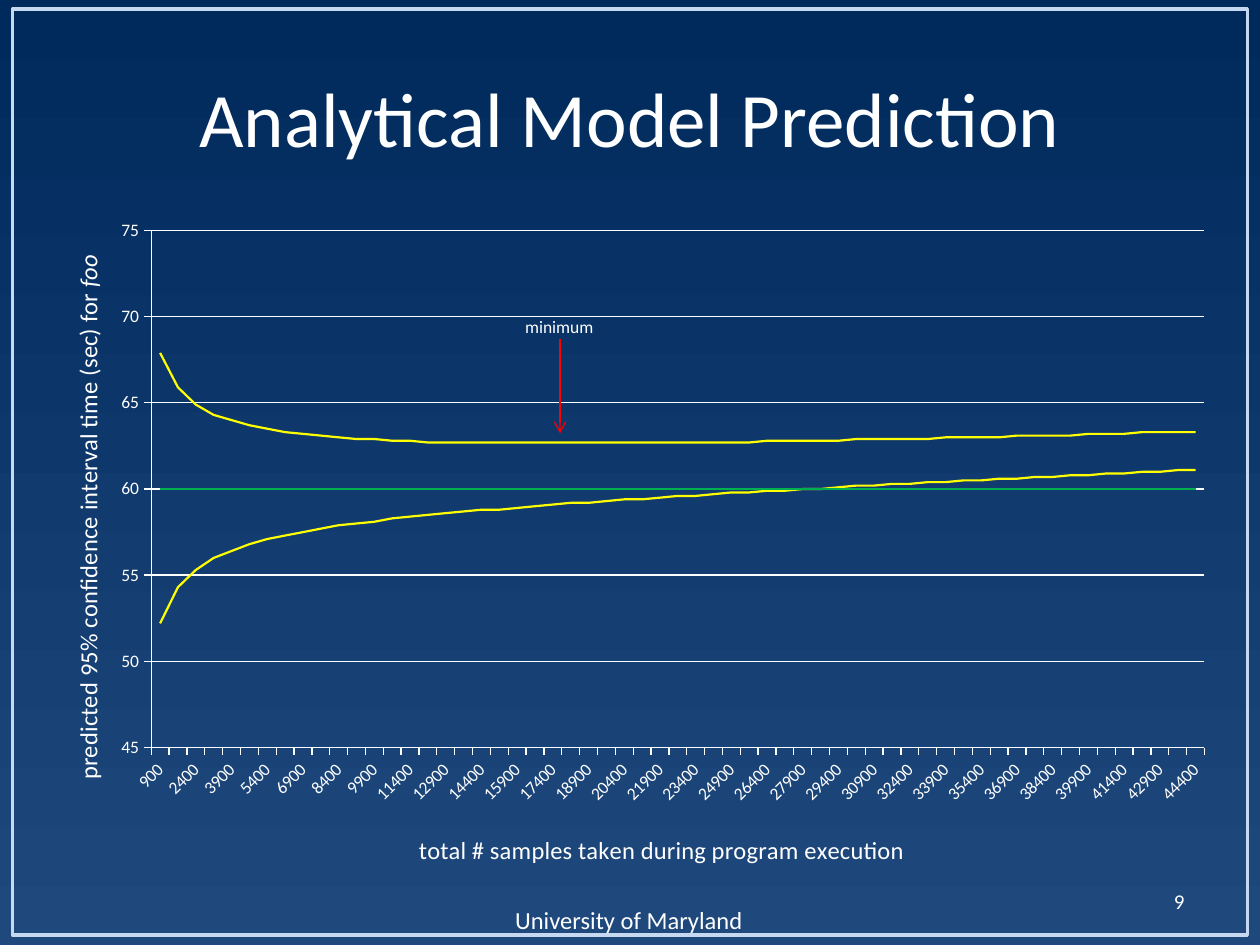
import math
import pptx
import pptx.chart.data
import pptx.dml.color
import pptx.enum.chart
import pptx.enum.shapes
import pptx.enum.text
import pptx.oxml
import pptx.oxml.ns
import pptx.util

WIDTH, HEIGHT = 10, 7.5
FONT = "Calibri"
COLORS = {
    "white": "FFFFFF",
    "frame": "C6D9F1",
    "bottom": "1F497D",
    "top": "00295C",
    "interval": "FFFF00",
    "actual": "00B050",
    "arrow": "FF0000",
}
ALIGN = pptx.enum.text.PP_ALIGN
TICK = pptx.enum.chart.XL_TICK_MARK
qn = pptx.oxml.ns.qn


def color(name):
    return pptx.dml.color.RGBColor.from_string(COLORS[name])


def inches(box):
    return [pptx.util.Inches(length) for length in box]


def set_attributes(target, values):
    for name, value in values.items():
        setattr(target, name, value)


def style_font(font, size, **values):
    set_attributes(font, {"size": pptx.util.Pt(size), "name": FONT, "bold": False, **values})
    font.color.rgb = color("white")


def style_line(line, name, width):
    line.color.rgb = color(name)
    line.width = pptx.util.Pt(width)


def add_element(parent, tag, **values):
    element = parent.makeelement(qn(tag), values)
    parent.append(element)
    return element


def set_layout(parent, **shares):
    layout = parent.find(qn("c:layout"))
    if layout is None:
        layout = parent.makeelement(qn("c:layout"), {})
        parent.insert(0, layout)
    manual = add_element(layout, "c:manualLayout")
    if "w" in shares:
        add_element(manual, "c:layoutTarget", val="inner")
    for mode in ("c:xMode", "c:yMode"):
        add_element(manual, mode, val="edge")
    for name, share in shares.items():
        add_element(manual, "c:" + name, val=str(share))


def add_text(slide, box, text, size, align=ALIGN.LEFT, wrap=True, middle=False):
    frame = slide.shapes.add_textbox(*inches(box)).text_frame
    anchor = pptx.enum.text.MSO_ANCHOR
    set_attributes(frame, {
        "word_wrap": wrap,
        "vertical_anchor": anchor.MIDDLE if middle else anchor.TOP,
    })
    paragraph = frame.paragraphs[0]
    paragraph.alignment = align
    run = paragraph.add_run()
    run.text = text
    style_font(run.font, size)


def add_backdrop(slide, box):
    fill = slide.background.fill
    fill.gradient()
    fill.gradient_angle = 90
    for stop, name, position in zip(fill.gradient_stops, ("bottom", "top"), (0, 1)):
        stop.color.rgb = color(name)
        stop.position = position
    frame = slide.shapes.add_shape(pptx.enum.shapes.MSO_SHAPE.RECTANGLE, *inches(box))
    frame.shadow.inherit = False
    frame.fill.background()
    style_line(frame.line, "frame", 2)


def prediction_data():
    samples = range(900, 44401, 750)
    data = pptx.chart.data.CategoryChartData()
    data.categories = [str(count) for count in samples]
    for number, side in enumerate((-1, 0, 1), 1):
        values = [
            round(60 + abs(side) * count * 0.00005 + side * 235 / math.sqrt(count), 1)
            for count in samples
        ]
        data.add_series(f"Series {number}", values)
    return data


def style_axis(axis, title_runs, position, rotation):
    set_attributes(axis, {"major_tick_mark": TICK.OUTSIDE, "minor_tick_mark": TICK.NONE})
    style_line(axis.format.line, "white", 0.75)
    style_font(axis.tick_labels.font, 10)
    frame = axis.axis_title.text_frame
    frame._txBody.find(qn("a:bodyPr")).set("rot", str(rotation * 60000))
    for text, italic in title_runs:
        run = frame.paragraphs[0].add_run()
        run.text = text
        style_font(run.font, 14, italic=italic)
    set_layout(axis.axis_title._element, **position)


def add_prediction_chart(slide, box):
    chart = slide.shapes.add_chart(
        pptx.enum.chart.XL_CHART_TYPE.LINE, *inches(box), prediction_data()
    ).chart
    set_attributes(chart, {"has_legend": False, "has_title": False})
    style_font(chart.font, 10)
    plot = chart.plots[0]
    plot.vary_by_categories = False
    lines = (("interval", 1.25), ("actual", 1.5), ("interval", 1.25))
    for series, (name, width) in zip(plot.series, lines):
        series.smooth = False
        series.marker.style = pptx.enum.chart.XL_MARKER_STYLE.NONE
        style_line(series.format.line, name, width)

    category_axis, value_axis = chart.category_axis, chart.value_axis
    style_axis(
        category_axis,
        [("total # samples taken during program execution", False)],
        {"x": 0.32, "y": 0.92}, 0,
    )
    style_axis(
        value_axis,
        [("predicted 95% confidence interval time (sec) for ", False), ("foo", True)],
        {"x": 0.03, "y": 0.06}, -90,
    )
    set_attributes(value_axis, {
        "minimum_scale": 45, "maximum_scale": 75, "major_unit": 5,
        "has_major_gridlines": True,
    })
    style_line(value_axis.major_gridlines.format.line, "white", 0.75)
    axis_element = category_axis._element
    axis_element.find(qn("c:txPr")).find(qn("a:bodyPr")).set("rot", str(-45 * 60000))
    skip = axis_element.makeelement(qn("c:tickLblSkip"), {"val": "2"})
    axis_element.find(qn("c:lblOffset")).addnext(skip)
    set_layout(chart._chartSpace.chart.plotArea, x=0.1, y=0.03, w=0.88, h=0.77)


def add_minimum_marker(slide, box):
    left, top, width, height = box
    label_height = 0.27
    add_text(slide, (left, top, width, label_height), "minimum", 10, wrap=False)
    center = left + width / 2 - 0.01
    arrow = slide.shapes.add_connector(
        pptx.enum.shapes.MSO_CONNECTOR.STRAIGHT,
        *inches((center, top + label_height - 0.04, center, top + height)),
    )
    style_line(arrow.line, "arrow", 0.75)
    add_element(arrow.line._get_or_add_ln(), "a:tailEnd", type="arrow")
    add_element(arrow._element.spPr, "a:effectLst")


def main():
    presentation = pptx.Presentation()
    set_attributes(presentation, {
        "slide_width": pptx.util.Inches(WIDTH),
        "slide_height": pptx.util.Inches(HEIGHT),
    })
    slide = presentation.slides.add_slide(presentation.slide_layouts[6])
    margin = WIDTH * 0.05
    content = WIDTH - 2 * margin
    add_backdrop(slide, (0.1, 0.07, WIDTH - 0.2, 7.35))
    add_text(slide, (3.99, 7.13, 2.03, 0.34), "University of Maryland", 14, wrap=False)
    add_text(slide, (margin, HEIGHT * 0.04, content, 1.25), "Analytical Model Prediction",
             44, ALIGN.CENTER, middle=True)
    add_text(slide, (7.17, 6.95, 2.33, 0.4), "9", 12, ALIGN.RIGHT, middle=True)
    add_prediction_chart(slide, (margin / 2, 1.67, WIDTH - margin, 5.33))
    add_minimum_marker(slide, (4.07, 2.46, 0.77, 0.98))
    presentation.save("out.pptx")


if __name__ == "__main__":
    main()
